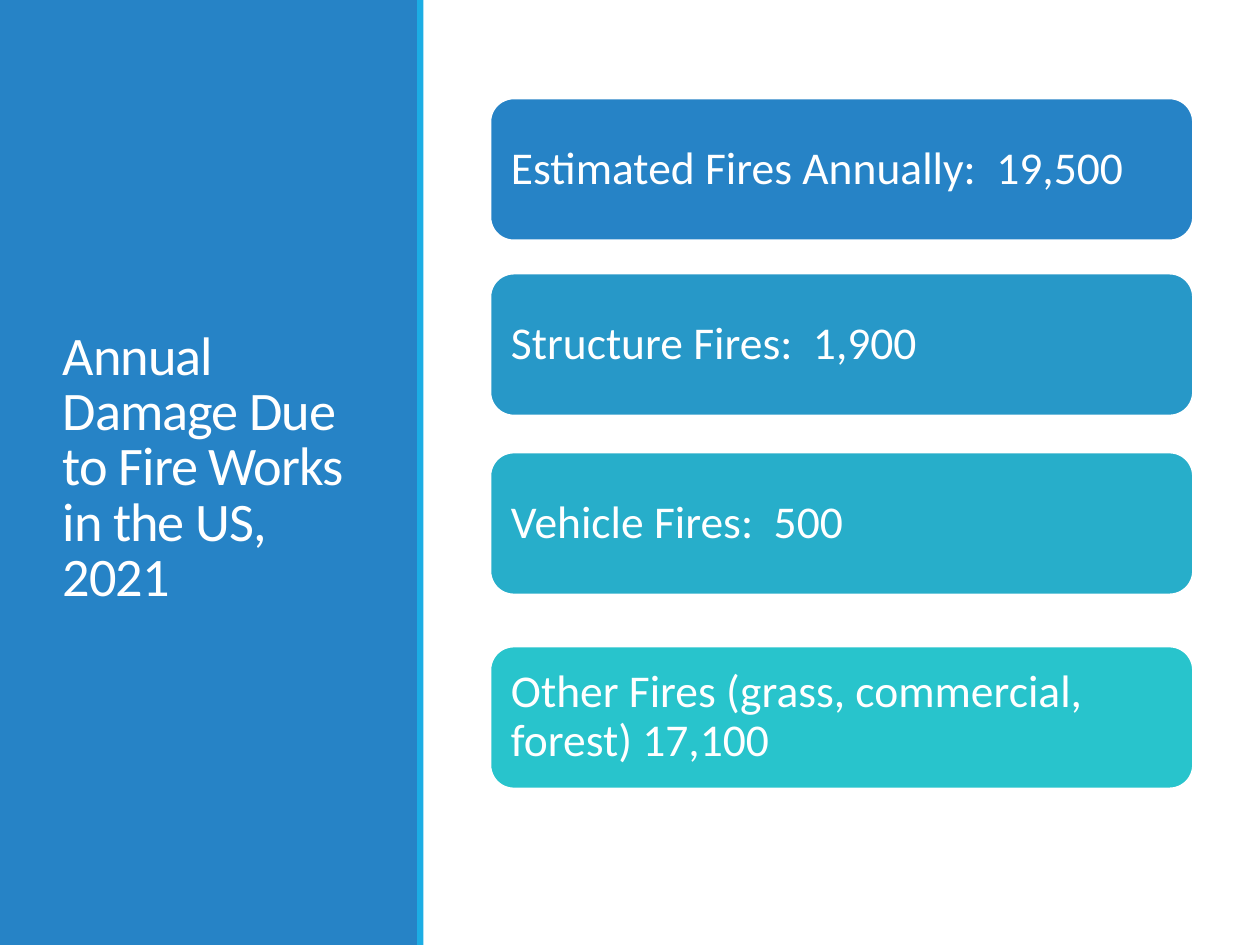
import pptx
import pptx.dml.color
import pptx.enum.shapes
import pptx.enum.text
import pptx.util

Inches = pptx.util.Inches
RGBColor = pptx.dml.color.RGBColor
MSO_SHAPE = pptx.enum.shapes.MSO_SHAPE

WHITE = RGBColor(0xFF, 0xFF, 0xFF)
BLUE = RGBColor(0x26, 0x83, 0xC6)
SKY = RGBColor(0x1C, 0xAD, 0xE4)
STEEL = RGBColor(0x27, 0x98, 0xC8)
TEAL = RGBColor(0x27, 0xAE, 0xCA)
AQUA = RGBColor(0x28, 0xC4, 0xCC)

CARD_HEIGHT = 1.13
CARDS = [
    (0, "Estimated Fires Annually:  19,500", BLUE),
    (1.39, "Structure Fires:  1,900", STEEL),
    (2.81, "Vehicle Fires:  500", TEAL),
    (4.35, "Other Fires (grass, commercial, forest) 17,100", AQUA),
]


def add_filled_shape(slide, kind, left, top, width, height, fill, line=None):
    """Add a shape with a solid fill and an optional outline colour."""
    shape = slide.shapes.add_shape(
        kind, Inches(left), Inches(top), Inches(width), Inches(height))
    shape.shadow.inherit = False
    shape.fill.solid()
    shape.fill.fore_color.rgb = fill
    if line is None:
        shape.line.fill.background()
    else:
        shape.line.color.rgb = line
        shape.line.width = pptx.util.Pt(1.25)
    return shape


def write_text(shape, text, size, line_spacing, side_inset=0.1, end_inset=0.05,
               letter_spacing=None):
    """Write one left-aligned white paragraph, centred vertically in a shape."""
    frame = shape.text_frame
    frame.word_wrap = True
    frame.vertical_anchor = pptx.enum.text.MSO_ANCHOR.MIDDLE
    frame.margin_left = frame.margin_right = Inches(side_inset)
    frame.margin_top = frame.margin_bottom = Inches(end_inset)
    paragraph = frame.paragraphs[0]
    paragraph.alignment = pptx.enum.text.PP_ALIGN.LEFT
    paragraph.line_spacing = line_spacing
    run = paragraph.add_run()
    run.text = text
    run.font.name = "Calibri"
    run.font.size = pptx.util.Pt(size)
    run.font.color.rgb = WHITE
    if letter_spacing is not None:
        run._r.get_or_add_rPr().set("spc", str(round(letter_spacing * 100)))


def add_title_panel(slide, left, top, width, height):
    """Add the coloured side panel with its title and edge stripe."""
    add_filled_shape(slide, MSO_SHAPE.RECTANGLE, left, top, width, height, BLUE)
    title = slide.shapes.add_textbox(
        Inches(left + 0.4), Inches(top + 0.57), Inches(2.53), Inches(6.31))
    write_text(title, "Annual Damage Due to Fire Works in the US, 2021",
               size=31, line_spacing=0.85, letter_spacing=-0.5)
    add_filled_shape(slide, MSO_SHAPE.RECTANGLE,
                     left + width - 0.01, top, 0.05, height, SKY)


def add_fire_cards(slide, left, top, width):
    """Add the column of rounded cards, one for each kind of fire."""
    for offset, text, fill in CARDS:
        card = add_filled_shape(slide, MSO_SHAPE.ROUNDED_RECTANGLE, left,
                                top + offset, width, CARD_HEIGHT, fill, WHITE)
        write_text(card, text, size=26, line_spacing=0.9,
                   side_inset=0.11, end_inset=0.11)


def main():
    """Build the slide and save it."""
    presentation = pptx.Presentation()
    presentation.slide_width = Inches(10)
    presentation.slide_height = Inches(7.5)
    slide = presentation.slides.add_slide(presentation.slide_layouts[6])
    add_title_panel(slide, 0, 0, 3.32, 7.5)
    add_fire_cards(slide, 3.89, 0.78, 5.58)
    presentation.save("out.pptx")


if __name__ == "__main__":
    main()
